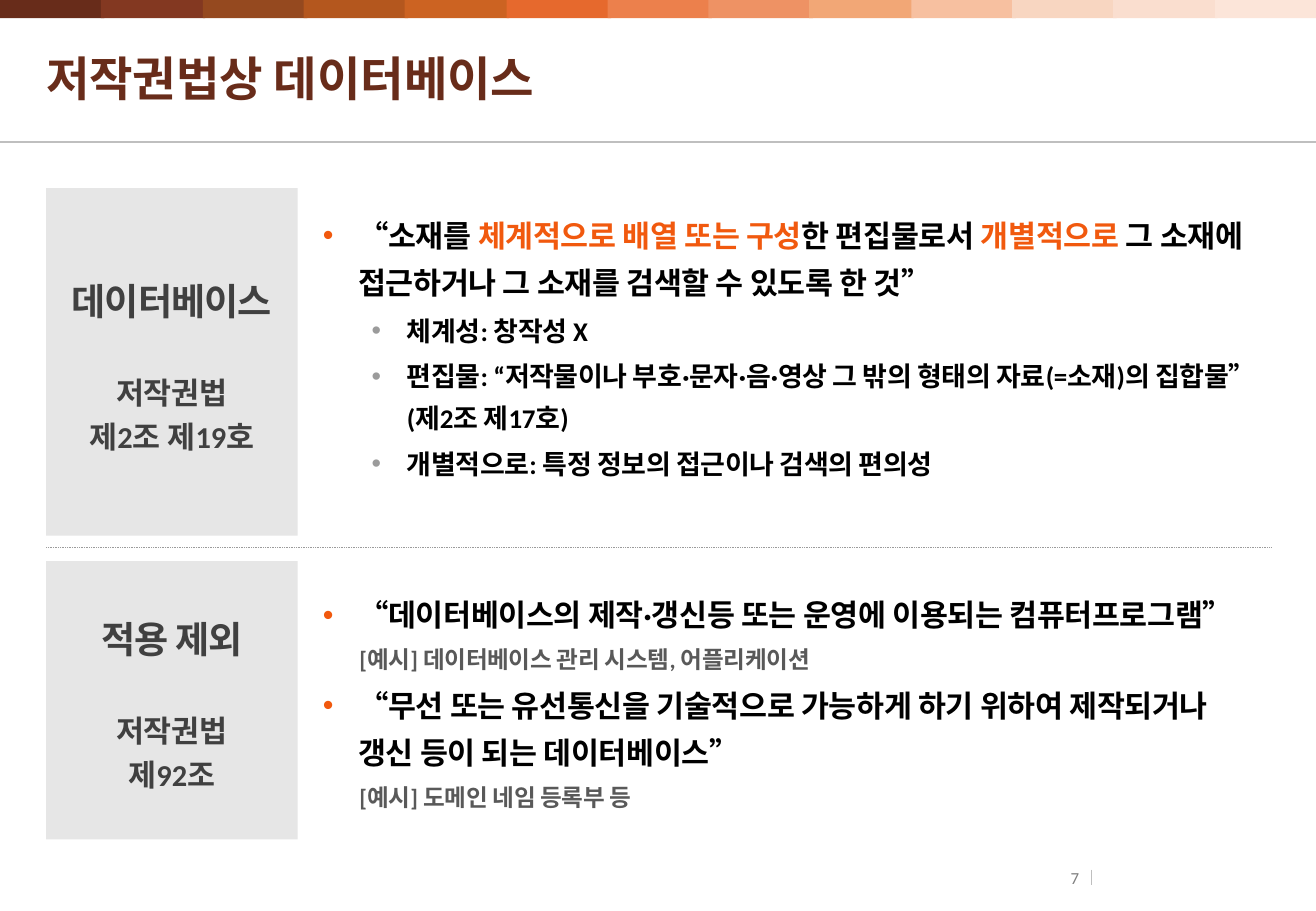
from lxml.etree import SubElement
from pptx import Presentation
from pptx.dml.color import RGBColor
from pptx.enum.dml import MSO_LINE
from pptx.enum.shapes import MSO_CONNECTOR, MSO_SHAPE
from pptx.enum.text import MSO_ANCHOR, PP_ALIGN
from pptx.oxml.ns import qn
from pptx.util import Pt

PX = 9144
C = {
    "title": "682C1A", "accent": "F1590E", "black": "000000", "card": "E6E6E6",
    "card_text": "404040", "example": "595959", "bullet": "9B9B9B",
    "rule": "BFBFBF", "number": "808080",
}
STRIP = ["682C1A", "833821", "95491F", "B4571E", "CC6322", "E6692D", "EC804C",
         "EE9264", "F2A776", "F7C0A0", "F8D6C1", "FADECF", "FCE5D9"]


def rgb(name):
    return RGBColor.from_string(C.get(name, name))


def style(r, size, color, bold=True, spacing=0):
    f = r.font
    f.name, f.size, f.bold = "Calibri", Pt(size), bold
    f.color.rgb = rgb(color)
    r._r.get_or_add_rPr().set("spc", str(spacing))


prs = Presentation()
prs.slide_width, prs.slide_height = 1083 * PX, 750 * PX
s = prs.slides.add_slide(prs.slide_layouts[6])

rules = [
    (0, 117, 1083, 117, "rule", 1, MSO_LINE.SOLID),
    (898, 716, 898, 729, "rule", 0.75, MSO_LINE.SOLID),
    (38, 451, 1046, 451, "bullet", 0.5, MSO_LINE.ROUND_DOT),
]
for x1, y1, x2, y2, color, width, dash in rules:
    ln = s.shapes.add_connector(MSO_CONNECTOR.STRAIGHT, x1 * PX, y1 * PX, x2 * PX, y2 * PX)
    ln.line.color.rgb = rgb(color)
    ln.line.width = Pt(width)
    ln.line.dash_style = dash
    SubElement(ln._element.spPr, qn("a:effectLst"))

for i, color in enumerate(STRIP):
    sp = s.shapes.add_shape(MSO_SHAPE.RECTANGLE, round(i * 1083 / 13) * PX, 0, 86 * PX, 15 * PX)
    sp.shadow.inherit = False
    sp.fill.solid()
    sp.fill.fore_color.rgb = rgb(color)
    sp.line.fill.background()

labels = [
    (38, 21, 1008, 86, "저작권법상 데이터베이스", 28, "title", True, PP_ALIGN.LEFT, 0),
    (841, 715, 57, 15, "7", 10, "number", False, PP_ALIGN.RIGHT, 10),
]
for x, y, w, h, text, size, color, bold, align, inset in labels:
    tf = s.shapes.add_textbox(x * PX, y * PX, w * PX, h * PX).text_frame
    tf.word_wrap = True
    tf.vertical_anchor = MSO_ANCHOR.MIDDLE
    tf.margin_left = tf.margin_right = inset * PX
    tf.margin_top = tf.margin_bottom = 0
    p = tf.paragraphs[0]
    p.text = text
    p.alignment = align
    style(p.runs[0], size, color, bold)

cards = [
    (155, 286, ["데이터베이스", "저작권법", "제2조 제19호"]),
    (462, 229, ["적용 제외", "저작권법", "제92조"]),
]
for y, h, lines in cards:
    sp = s.shapes.add_shape(MSO_SHAPE.RECTANGLE, 38 * PX, y * PX, 207 * PX, h * PX)
    sp.shadow.inherit = False
    sp.fill.solid()
    sp.fill.fore_color.rgb = rgb("card")
    sp.line.fill.background()
    tf = sp.text_frame
    tf.word_wrap = True
    tf.vertical_anchor = MSO_ANCHOR.MIDDLE
    tf.text = "\n".join(lines)
    for i, p in enumerate(tf.paragraphs):
        p.alignment = PP_ALIGN.CENTER
        p.line_spacing = 1.2
        style(p.runs[0], 18 if i else 22, "card_text", spacing=0 if i else -50)
    tf.paragraphs[1].space_before = Pt(26)

LEVELS = {
    "quote": (0, 29, -29, "accent", 18, "black"),
    "point": (1, 69, -29, "bullet", 16, "black"),
    "example": (1, 30, 0, None, 14, "example"),
}
bodies = [
    (165, 234, [
        ("quote", ["“소재를 ", "체계적으로 배열 또는 구성", "한 편집물로서 ", "개별적으로",
                   " 그 소재에 접근하거나 그 소재를 검색할 수 있도록 한 것”"]),
        ("point", ["체계성: 창작성 X"]),
        ("point", ["편집물: “저작물이나 부호·문자·음·영상 그 밖의 형태의 자료(=소재)의 집합물” (제2조 제17호)"]),
        ("point", ["개별적으로: 특정 정보의 접근이나 검색의 편의성"]),
    ]),
    (477, 198, [
        ("quote", ["“데이터베이스의 제작·갱신등 또는 운영에 이용되는 컴퓨터프로그램”"]),
        ("example", ["[예시] 데이터베이스 관리 시스템, 어플리케이션"]),
        ("quote", ["“무선 또는 유선통신을 기술적으로 가능하게 하기 위하여 제작되거나 갱신 등이 되는 데이터베이스”"]),
        ("example", ["[예시] 도메인 네임 등록부 등"]),
    ]),
]
for y, h, paragraphs in bodies:
    tf = s.shapes.add_textbox(256 * PX, y * PX, 790 * PX, h * PX).text_frame
    tf.word_wrap = True
    for i, (kind, parts) in enumerate(paragraphs):
        level, left, indent, bullet, size, color = LEVELS[kind]
        p = tf.add_paragraph() if i else tf.paragraphs[0]
        p.level = level
        p.line_spacing = 1.3
        p.space_after = Pt(2)
        pPr = p._p.get_or_add_pPr()
        pPr.set("marL", str(left * PX))
        pPr.set("indent", str(indent * PX))
        if bullet:
            SubElement(SubElement(pPr, qn("a:buClr")), qn("a:srgbClr")).set("val", C[bullet])
            SubElement(pPr, qn("a:buFont")).set("typeface", "Arial")
            SubElement(pPr, qn("a:buChar")).set("char", "•")
        for j, text in enumerate(parts):
            r = p.add_run()
            r.text = text
            style(r, size, "accent" if j % 2 else color, spacing=-20)

prs.save("out.pptx")
